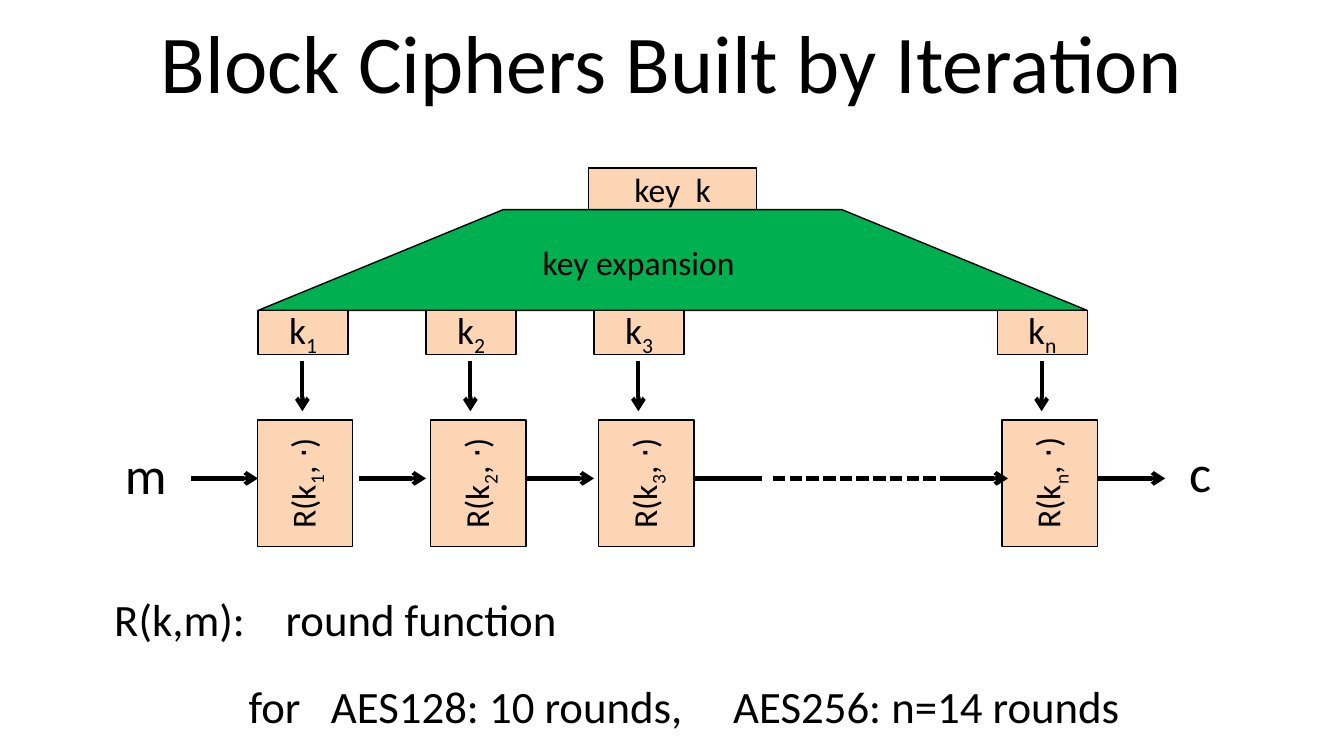
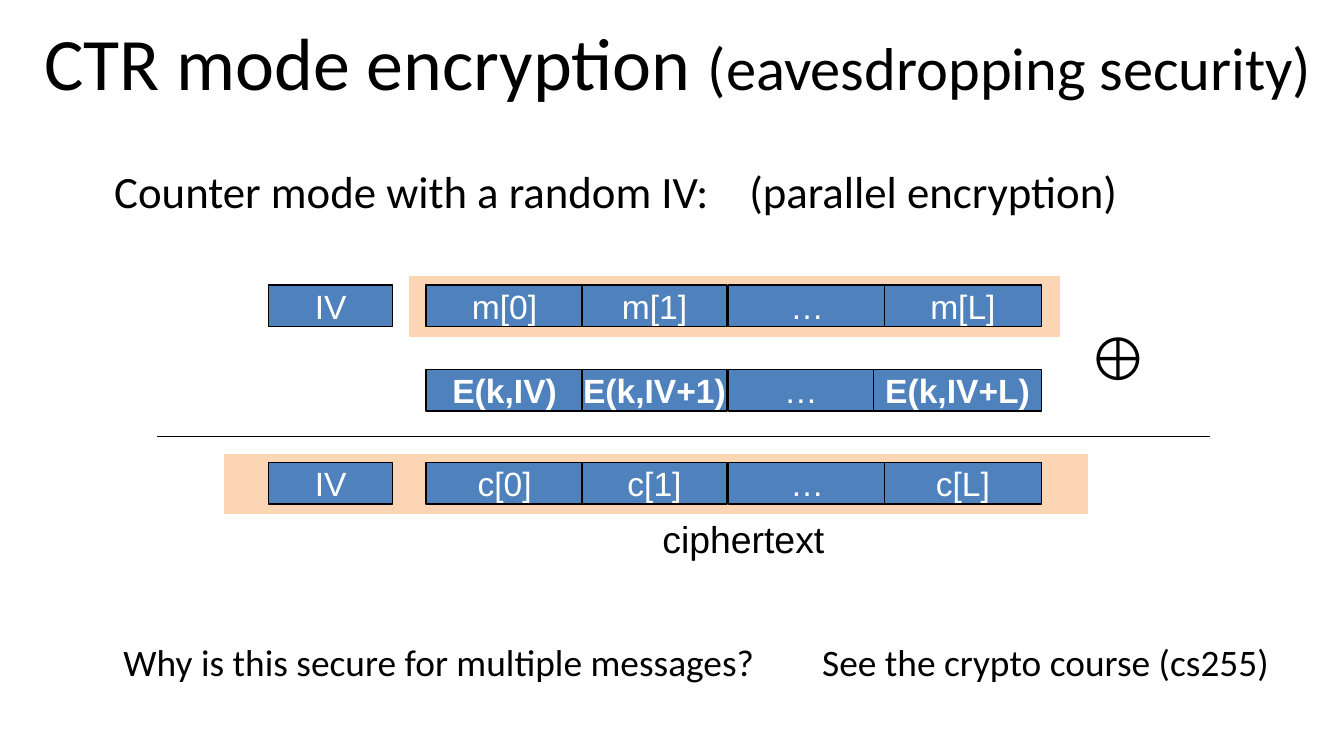
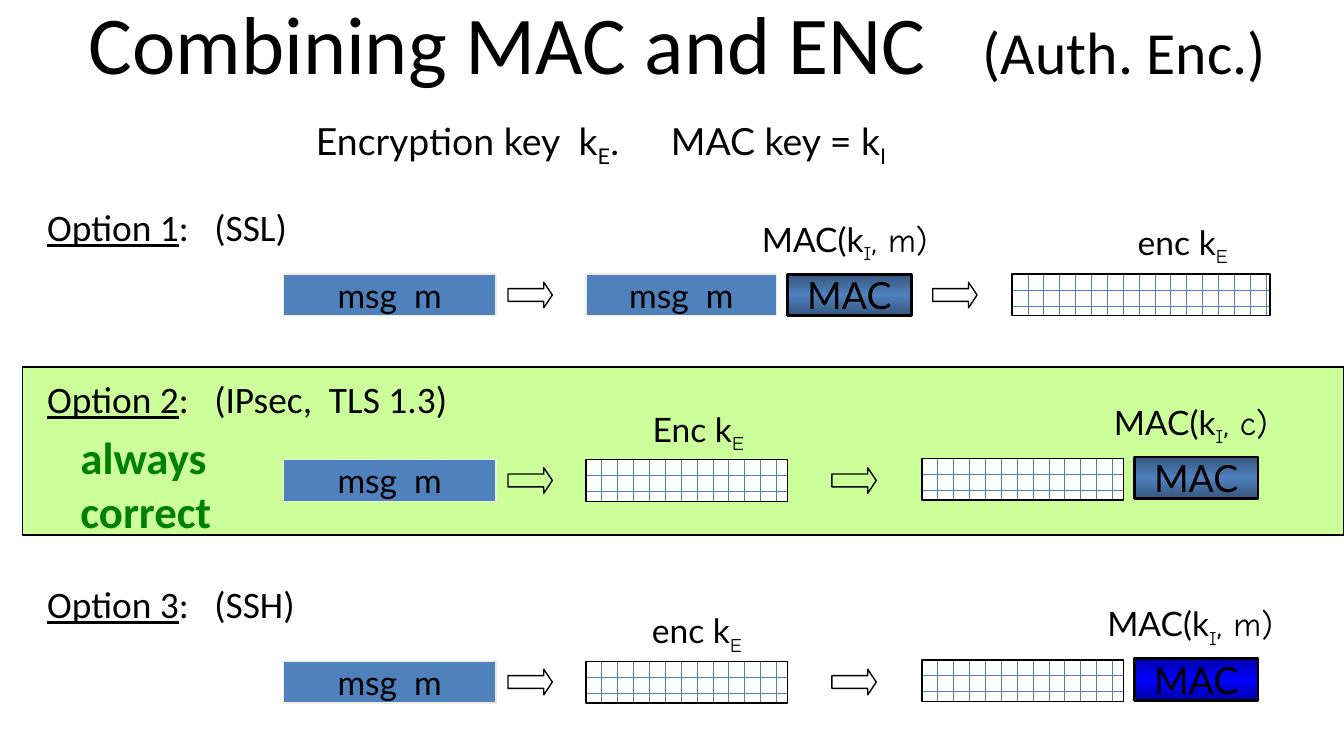
from dataclasses import dataclass

from lxml.etree import SubElement
from pptx import Presentation
from pptx.dml.color import RGBColor
from pptx.enum.dml import MSO_LINE, MSO_PATTERN
from pptx.enum.shapes import MSO_CONNECTOR, MSO_SHAPE
from pptx.enum.text import MSO_ANCHOR, MSO_AUTO_SIZE, PP_ALIGN
from pptx.oxml.ns import qn
from pptx.util import Inches, Pt

# Shared style
COLORS = {
    "black": "000000", "white": "FFFFFF", "peach": "FCD5B5", "green": "00B050",
    "blue": "4F81BD", "navy": "35567E", "bright": "0000FF", "deep": "0000AA",
    "cream": "EEECE1", "lime": "CCFF99", "dark green": "008000",
}
BODY_FONT, BOX_FONT, LABEL_FONT, MARK_FONT = "Calibri", "Arial", "Lato", "Comic Neue"
BOX_HEIGHT = 0.31
SPACE_WIDTH = 0.226  # of the text size


@dataclass
class Run:
    text: str
    subscript: bool = False
    underline: bool = False
    font: str | None = None
    size: float | None = None
    stretch: int = 1  # width in word spaces, for a single space


@dataclass
class Line:
    runs: list[Run]
    before: float = 0
    indent: float = 0
    font: str | None = None


@dataclass
class KeyColumn:
    index: str
    key_left: float
    round_center: float


@dataclass
class Cell:
    text: str
    left: float
    width: float
    bold: bool = False


@dataclass
class Option:
    top: float
    label_tops: tuple[float, float]
    enc_label: str
    mac_input: str
    enc_left: float
    mac_left: float
    mac_width: float
    mac_colors: tuple[str, str]


def rgb(name: str) -> RGBColor:
    return RGBColor.from_string(COLORS[name])


def gap(spaces: int) -> Run:
    """One space, stretched to the width of several."""
    return Run(" ", stretch=spaces)


def place(shape, left: float, top: float, width: float, height: float) -> None:
    shape.left, shape.top = Inches(left), Inches(top)
    shape.width, shape.height = Inches(width), Inches(height)


def write(shape, text, *, size=18, font=BODY_FONT, color="black", bold=False,
          align=PP_ALIGN.LEFT, anchor=MSO_ANCHOR.TOP, wrap=True) -> None:
    """Fill a shape with a string, or with a list of Line objects."""
    frame = shape.text_frame
    frame.word_wrap = wrap
    frame.vertical_anchor = anchor
    frame.auto_size = MSO_AUTO_SIZE.NONE
    lines = [Line([Run(text)])] if isinstance(text, str) else text
    for number, line in enumerate(lines):
        paragraph = frame.paragraphs[0] if number == 0 else frame.add_paragraph()
        if shape.is_placeholder:
            properties = paragraph._p.get_or_add_pPr()
            properties.set("marL", str(Inches(line.indent)))
            properties.set("indent", "0")
            SubElement(properties, qn("a:buNone"))
        paragraph.alignment = align
        paragraph.space_before = Pt(line.before)
        for part in line.runs:
            for row, piece in enumerate(part.text.split("\n")):
                if row:
                    paragraph.add_line_break()
                run = paragraph.add_run()
                run.text = piece
                run.font.name = part.font or line.font or font
                run.font.size = Pt(part.size or size)
                run.font.bold = bold
                run.font.color.rgb = rgb(color)
                if part.underline:
                    run.font.underline = True
                properties = run._r.get_or_add_rPr()
                if part.subscript:
                    properties.set("baseline", "-25000")
                if part.stretch > 1:
                    extra = (part.stretch - 1) * SPACE_WIDTH * size
                    properties.set("spc", str(round(extra * 100)))


def add_box(slide, left: float, top: float, width: float, height: float, *,
            kind=MSO_SHAPE.RECTANGLE, fill: str | None = None, line="black",
            weight=0.75, text=None, **text_format):
    shape = slide.shapes.add_shape(
        kind, Inches(left), Inches(top), Inches(width), Inches(height))
    shape.shadow.inherit = False
    if fill:
        shape.fill.solid()
        shape.fill.fore_color.rgb = rgb(fill)
    else:
        shape.fill.background()
    shape.line.color.rgb = rgb(line)
    shape.line.width = Pt(weight)
    if text:
        write(shape, text, align=PP_ALIGN.CENTER, anchor=MSO_ANCHOR.MIDDLE, **text_format)
    return shape


def add_label(slide, left: float, top: float, width: float, height: float, text,
              *, wrap=False, **text_format) -> None:
    label = slide.shapes.add_textbox(
        Inches(left), Inches(top), Inches(width), Inches(height))
    write(label, text, wrap=wrap, **text_format)
    label.text_frame.auto_size = MSO_AUTO_SIZE.SHAPE_TO_FIT_TEXT


def add_line(slide, start: tuple[float, float], end: tuple[float, float], *,
             weight=2.25, arrow=True, dashed=False) -> None:
    connector = slide.shapes.add_connector(
        MSO_CONNECTOR.STRAIGHT, *(Inches(value) for value in start + end))
    connector.line.color.rgb = rgb("black")
    connector.line.width = Pt(weight)
    if dashed:
        connector.line.dash_style = MSO_LINE.SQUARE_DOT
    if arrow:
        SubElement(connector.line._get_or_add_ln(), qn("a:tailEnd"), type="arrow")
    SubElement(connector._element.spPr, qn("a:effectLst"))


def add_slide(presentation, title, title_area, body, body_area, *,
              title_size=44, body_size=24):
    slide = presentation.slides.add_slide(presentation.slide_layouts[1])
    heading, content = slide.shapes.title, slide.placeholders[1]
    place(heading, *title_area)
    write(heading, title, size=title_size, align=PP_ALIGN.CENTER,
          anchor=MSO_ANCHOR.MIDDLE)
    place(content, *body_area)
    write(content, body, size=body_size)
    return slide


# Slide 1: block ciphers
def build_block_ciphers(presentation) -> None:
    body = [
        Line([Run("R(k,m):"), gap(4), Run("round function")]),
        Line([Run("for"), gap(3), Run("AES128: 10 rounds,"), gap(5),
              Run("AES256: n=14 rounds")], before=18.2, indent=1),
    ]
    slide = add_slide(presentation, "Block Ciphers Built by Iteration",
                      (0.5, -0.02, 9, 0.94), body, (0.75, 4.35, 8.92, 1.12))
    add_box(slide, 4.38, 1.25, 1.25, BOX_HEIGHT, fill="peach", text="key  k")
    expansion = add_box(slide, 1.92, 1.56, 6.17, 0.75,
                        kind=MSO_SHAPE.TRAPEZOID, fill="green")
    expansion.adjustments[0] = 2.433
    add_label(slide, 3.94, 1.75, 1.66, 0.4, "key expansion")

    columns = [KeyColumn("1", 1.92, 2.27), KeyColumn("2", 3.17, 3.56),
               KeyColumn("3", 4.42, 4.81), KeyColumn("n", 7.42, 7.81)]
    for column in columns:
        index = Run(column.index, subscript=True)
        add_box(slide, column.key_left, 2.31, 0.67, 0.33, fill="peach",
                text=[Line([Run("k"), index])], size=20)
        round_box = add_box(slide, column.round_center - 0.47, 3.24, 0.94, 0.71,
                            fill="peach", text=[Line([Run("R(k"), index, Run(", ⋅)")])])
        round_box.rotation = 270
        center = column.key_left + 0.33
        add_line(slide, (center, 2.69), (center, 3.06))

    # Data path from m to c
    for left in (1.42, 2.67, 3.92, 5.17, 7, 8.17):
        add_line(slide, (left, 3.56), (left + 0.5, 3.56), arrow=left != 5.17)
    add_line(slide, (5.75, 3.56), (7, 3.56), arrow=False, dashed=True)
    add_label(slide, 0.83, 3.24, 0.52, 0.57, "m", size=28)
    add_label(slide, 8.75, 3.23, 0.42, 0.57, "c", size=28, wrap=True)


# Slide 2: counter mode
def build_counter_mode(presentation) -> None:
    title = [Line([Run("CTR mode encryption "),
                   Run("(eavesdropping security)", size=32.4)])]
    body = [Line([Run("Counter mode with a random IV:"), gap(4),
                  Run("(parallel encryption)")])]
    slide = add_slide(presentation, title, (0.17, -0.02, 9.75, 0.94),
                      body, (0.75, 1.17, 8.92, 0.56), title_size=39.6)
    for left, top, width in ((3.05, 2.06, 4.83), (1.67, 3.38, 6.42)):
        add_box(slide, left, top, width, 0.44, fill="peach", line="peach")

    def block_row(letter: str) -> list[Cell]:
        return [Cell("IV", 2, 0.92), Cell(f"{letter}[0]", 3.17, 1.17),
                Cell(f"{letter}[1]", 4.33, 1.08), Cell("…", 5.42, 1.17),
                Cell(f"{letter}[L]", 6.58, 1.17)]

    pad_row = [Cell("E(k,IV)", 3.17, 1.17, True), Cell("E(k,IV+1)", 4.33, 1.08, True),
               Cell("…", 5.42, 1.08), Cell("E(k,IV+L)", 6.5, 1.25, True)]
    for top, cells in ((2.12, block_row("m")), (2.75, pad_row), (3.44, block_row("c"))):
        for cell in cells:
            add_box(slide, cell.left, top, cell.width, BOX_HEIGHT, fill="blue",
                    text=cell.text, font=BOX_FONT, color="white",
                    bold=cell.bold, wrap=False)
    add_label(slide, 8, 2.34, 0.55, 0.64, "⊕", size=32, font=BOX_FONT)
    add_line(slide, (1.17, 3.25), (9, 3.25), weight=0.75, arrow=False)
    add_label(slide, 4.83, 3.79, 1.42, 0.44, "ciphertext", size=20, font=BOX_FONT)
    question = [Run("Why is this secure for multiple messages?"), gap(8),
                Run("See the crypto course (cs255)")]
    add_label(slide, 0.82, 4.71, 8.81, 0.44, [Line(question)], size=20)


# Slide 3: combining MAC and encryption
def add_message(slide, left: float, top: float, width: float) -> None:
    add_box(slide, left, top, width, BOX_HEIGHT, fill="blue", line="cream",
            text="msg  m", font=LABEL_FONT, wrap=False)


def add_mac(slide, left: float, top: float, edge: str, middle: str) -> None:
    box = add_box(slide, left, top, 0.92, BOX_HEIGHT, weight=1.5,
                  text="MAC", size=20, font=LABEL_FONT, wrap=False)
    box.fill.gradient()
    box.fill.gradient_angle = 270
    stops = box._element.spPr.find(qn("a:gradFill")).find(qn("a:gsLst"))
    stops.clear()
    for position, color in ((0, edge), (50, middle), (100, edge)):
        stop = SubElement(stops, qn("a:gs"), pos=str(position * 1000))
        SubElement(stop, qn("a:srgbClr"), val=COLORS[color])


def add_encrypted(slide, left: float, top: float, width: float) -> None:
    box = add_box(slide, left, top, width, BOX_HEIGHT)
    box.fill.patterned()
    box.fill.pattern = MSO_PATTERN.HORIZONTAL_BRICK
    box.fill.fore_color.rgb = rgb("blue")
    box.fill.back_color.rgb = rgb("white")


def add_step_arrow(slide, left: float, row_top: float) -> None:
    arrow = add_box(slide, left, row_top + 0.06, 0.33, 0.19, kind=MSO_SHAPE.RIGHT_ARROW)
    arrow.adjustments[0], arrow.adjustments[1] = 0.5, 0.333


def add_key_label(slide, left: float, top: float, width: float,
                  text: str, key: str, rest: str = "") -> None:
    runs = [Run(text), Run(key, subscript=True, font=MARK_FONT)]
    if rest:
        runs.append(Run(rest, font=MARK_FONT))
    add_label(slide, left, top, width, 0.4, [Line(runs)],
              font=LABEL_FONT, align=PP_ALIGN.CENTER)


def build_combining(presentation) -> None:
    title = [Line([Run("Combining MAC and ENC"), gap(3), Run("(Auth. Enc.)", size=32)])]
    body = [Line([Run("Encryption key  k"), Run("E", subscript=True), Run("."), gap(6),
                  Run("MAC key = k"), Run("I", subscript=True)],
                 indent=2, font=LABEL_FONT)]
    for number, (protocol, before) in enumerate(
            (("(SSL)", 18.9), ("(IPsec,  TLS 1.3)", 68), ("(SSH)", 86)), start=1):
        body.append(Line([Run(f"Option {number}", underline=True), Run(":"), gap(3),
                          Run(protocol)], before=before))
    slide = add_slide(presentation, title, (0.5, 0, 9.08, 0.62),
                      body, (0.25, 0.83, 8.94, 4.56), body_size=20)
    band = add_box(slide, 0.17, 2.73, 9.83, 1.25, fill="lime")
    slide.shapes._spTree.insert(2, band._element)

    # Option 1: MAC, then encrypt
    top = 2.04
    add_message(slide, 2.11, top, 1.58)
    add_step_arrow(slide, 3.78, top)
    add_message(slide, 4.36, top, 1.42)
    add_mac(slide, 5.86, top, "navy", "blue")
    add_step_arrow(slide, 6.94, top)
    add_encrypted(slide, 7.53, top, 1.92)
    add_key_label(slide, 8.35, 1.6, 0.9, "enc k", "E")
    add_key_label(slide, 5.56, 1.58, 1.45, "MAC(k", "I", ", m)")

    # Options 2 and 3: encrypt, with the MAC beside the ciphertext
    options = [
        Option(3.42, (2.99, 2.94), "Enc k", ", c)", 4.74, 8.17, 1.38, ("navy", "blue")),
        Option(4.92, (4.49, 4.44), "enc k", ", m)", 4.73, 8.13, 1.45, ("deep", "bright")),
    ]
    for option in options:
        add_message(slide, 2.11, option.top, 1.58)
        for left in (3.78, 6.19):
            add_step_arrow(slide, left, option.top)
        add_encrypted(slide, 4.36, option.top, 1.5)
        add_encrypted(slide, 6.86, option.top - 0.01, 1.5)
        add_mac(slide, 8.44, option.top - 0.02, *option.mac_colors)
        enc_top, mac_top = option.label_tops
        add_key_label(slide, option.enc_left, enc_top, 0.91, option.enc_label, "E")
        add_key_label(slide, option.mac_left, mac_top, option.mac_width,
                      "MAC(k", "I", option.mac_input)
    add_label(slide, 0.5, 3.15, 1.19, 0.91, "always\ncorrect",
              size=24, color="dark green", bold=True)


def main() -> None:
    presentation = Presentation()
    presentation.slide_width = Inches(10)
    presentation.slide_height = presentation.slide_width * 9 // 16
    build_block_ciphers(presentation)
    build_counter_mode(presentation)
    build_combining(presentation)
    presentation.save("out.pptx")


if __name__ == "__main__":
    main()
